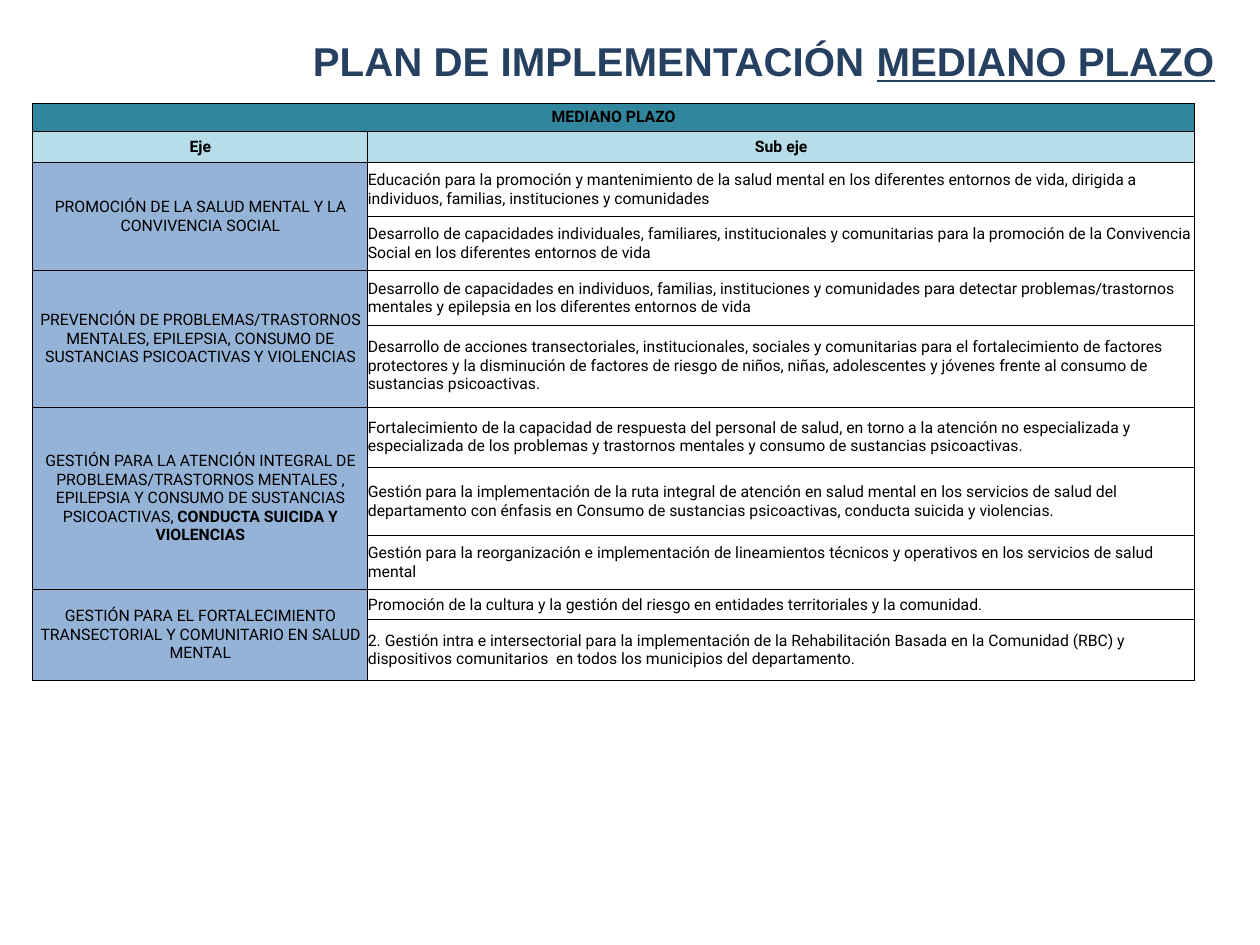
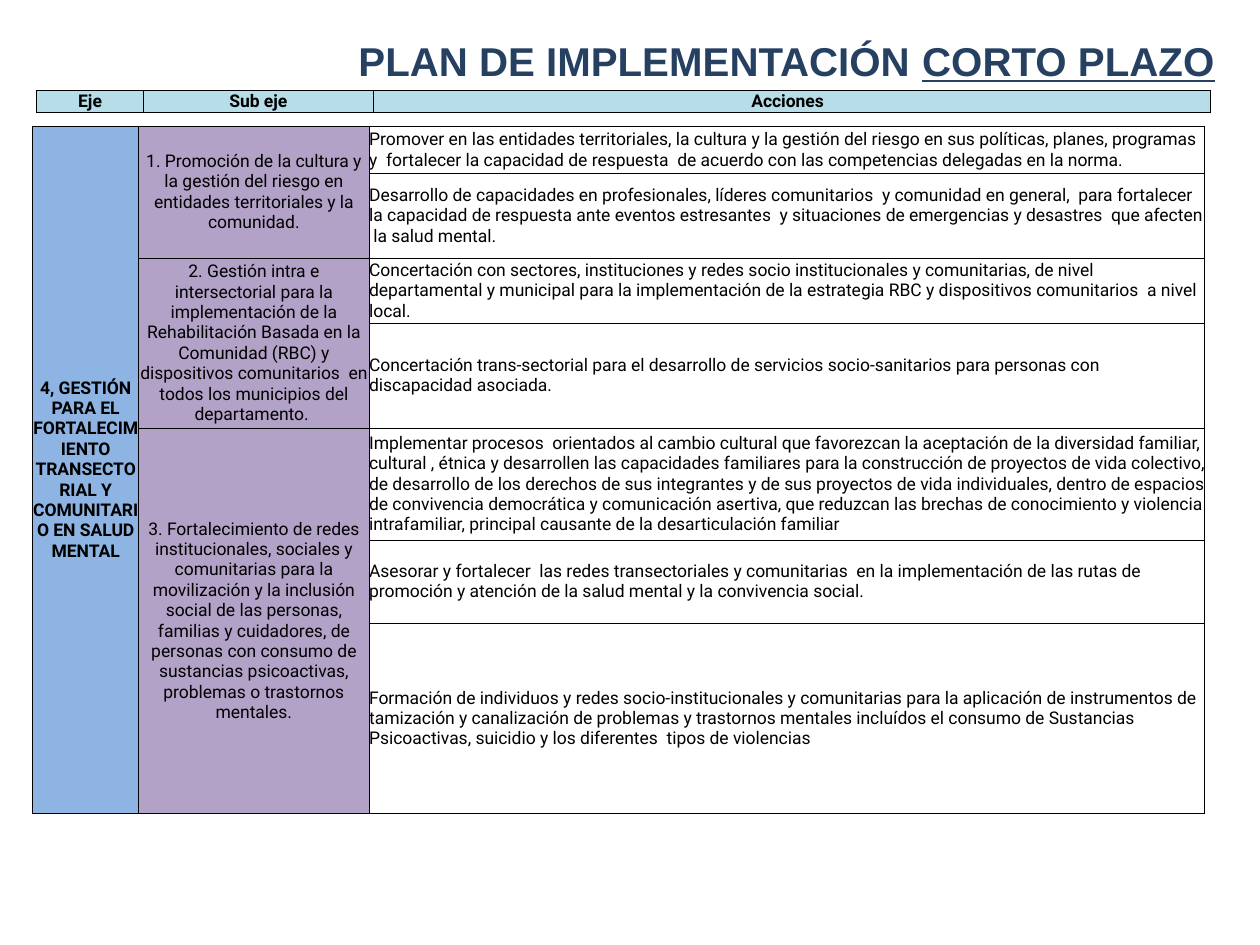
from lxml import etree
from pptx import Presentation
from pptx.dml.color import RGBColor
from pptx.enum import text as t
from pptx.oxml import ns
from pptx.util import Inches, Pt

COLORS = {
    "title": "254061",
    "ink": "000000",
    "term": "31859C",
    "heading": "B7DEE8",
    "medium_axis": "95B3D7",
    "short_axis": "8EB4E3",
    "sub_axis": "B3A2C7",
}
LEFT, CENTER, RIGHT = t.PP_ALIGN.LEFT, t.PP_ALIGN.CENTER, t.PP_ALIGN.RIGHT

MEDIUM_ROWS = [0.22, 0.25, 0.43, 0.43, 0.43, 0.65, 0.48, 0.54, 0.43, 0.24, 0.48]
MEDIUM_PLAN = [
    (["PROMOCIÓN DE LA SALUD MENTAL Y LA CONVIVENCIA SOCIAL"], [
        "Educación para la promoción y mantenimiento de la salud mental en los diferentes "
        "entornos de vida, dirigida a individuos, familias, instituciones y comunidades",
        "Desarrollo de capacidades individuales, familiares, institucionales y comunitarias "
        "para la promoción de la Convivencia Social en los diferentes entornos de vida",
    ]),
    (["PREVENCIÓN DE PROBLEMAS/TRASTORNOS MENTALES, EPILEPSIA, CONSUMO DE SUSTANCIAS "
      "PSICOACTIVAS Y VIOLENCIAS"], [
        "Desarrollo de capacidades en individuos, familias, instituciones y comunidades para "
        "detectar problemas/trastornos mentales y epilepsia en los diferentes entornos de vida",
        "Desarrollo de acciones transectoriales, institucionales, sociales y comunitarias para "
        "el fortalecimiento de factores protectores y la disminución de factores de riesgo de "
        "niños, niñas, adolescentes y jóvenes frente al consumo de sustancias psicoactivas.",
    ]),
    (["GESTIÓN PARA LA ATENCIÓN INTEGRAL DE PROBLEMAS/TRASTORNOS MENTALES , EPILEPSIA Y "
      "CONSUMO DE SUSTANCIAS PSICOACTIVAS, ", ("CONDUCTA SUICIDA Y VIOLENCIAS", {"bold": True})], [
        "Fortalecimiento de la capacidad de respuesta del personal de salud, en torno a la "
        "atención no especializada y especializada de los problemas y trastornos mentales y "
        "consumo de sustancias psicoactivas.",
        "Gestión para la implementación de la ruta integral de atención en salud mental en los "
        "servicios de salud del departamento con énfasis en Consumo de sustancias psicoactivas, "
        "conducta suicida y violencias.",
        "Gestión para la reorganización e implementación de lineamientos técnicos y operativos "
        "en los servicios de salud mental",
    ]),
    (["GESTIÓN PARA EL FORTALECIMIENTO TRANSECTORIAL Y COMUNITARIO EN SALUD MENTAL"], [
        "Promoción de la cultura y la gestión del riesgo en entidades territoriales y la comunidad.",
        "2. Gestión intra e intersectorial para la implementación de la Rehabilitación Basada en "
        "la Comunidad (RBC) y dispositivos comunitarios  en todos los municipios del departamento.",
    ]),
]

SHORT_ROWS = [0.38, 0.66, 0.52, 0.83, 0.89, 0.66, 1.51]
SHORT_AXIS = "4, GESTIÓN PARA EL FORTALECIMIENTO TRANSECTORIAL Y COMUNITARIO EN SALUD MENTAL"
SHORT_PLAN = [
    (["1. Promoción de la cultura y la gestión del riesgo en entidades territoriales y la "
      "comunidad."], [
        "Promover en las entidades territoriales, la cultura y la gestión del riesgo en sus "
        "políticas, planes, programas  y  fortalecer la capacidad de respuesta  de acuerdo con "
        "las competencias delegadas en la norma.",
        "Desarrollo de capacidades en profesionales, líderes comunitarios  y comunidad en "
        "general,  para fortalecer la capacidad de respuesta ante eventos estresantes  y "
        "situaciones de emergencias y desastres  que afecten  la salud mental.",
    ]),
    (["2. Gestión intra e intersectorial para la implementación de la Rehabilitación Basada en "
      "la Comunidad (RBC) y dispositivos comunitarios  en todos los municipios del "
      "departamento. "], [
        "Concertación con sectores, instituciones y redes socio institucionales y comunitarias, "
        "de nivel departamental y municipal para la implementación de la estrategia RBC y "
        "dispositivos comunitarios  a nivel local.",
        "Concertación trans-sectorial para el desarrollo de servicios socio-sanitarios para "
        "personas con discapacidad asociada.",
    ]),
    (["3. Fortalecimiento de redes institucionales, sociales y comunitarias para la movilización "
      "y la inclusión social de las personas, familias y cuidadores, de personas con consumo de "
      "sustancias psicoactivas, problemas o trastornos mentales."], [
        "Implementar procesos  orientados al cambio cultural que favorezcan la aceptación de la "
        "diversidad familiar, cultural , étnica y desarrollen las capacidades familiares para la "
        "construcción de proyectos de vida colectivo, de desarrollo de los derechos de sus "
        "integrantes y de sus proyectos de vida individuales, dentro de espacios de convivencia "
        "democrática y comunicación asertiva, que reduzcan las brechas de conocimiento y "
        "violencia intrafamiliar, principal causante de la desarticulación familiar",
        "Asesorar y fortalecer  las redes transectoriales y comunitarias  en la implementación "
        "de las rutas de promoción y atención de la salud mental y la convivencia social.",
        "Formación de individuos y redes socio-institucionales y comunitarias para la aplicación "
        "de instrumentos de tamización y canalización de problemas y trastornos mentales "
        "incluídos el consumo de Sustancias Psicoactivas, suicidio y los diferentes  tipos de "
        "violencias",
    ]),
]


def write(frame, pieces, size=9, font="Roboto", color="ink", bold=False, align=LEFT):
    frame.word_wrap = True
    paragraph = frame.paragraphs[0]
    paragraph.alignment = align
    for piece in pieces:
        words, changes = (piece, {}) if isinstance(piece, str) else piece
        run = paragraph.add_run()
        run.text = words
        run.font.size = Pt(size)
        run.font.name = font
        run.font.color.rgb = RGBColor.from_string(COLORS[color])
        run.font.bold = changes.get("bold", bold)
        run.font.underline = changes.get("underline")


def add_title(slide, term):
    title = slide.shapes.add_textbox(Inches(1.96), Inches(0.24), Inches(7.78), Inches(0.49))
    write(title.text_frame, ["PLAN DE IMPLEMENTACIÓN ", (term, {"underline": True})],
          size=23, font="Arial", color="title", bold=True, align=RIGHT)
    title.text_frame.auto_size = t.MSO_AUTO_SIZE.SHAPE_TO_FIT_TEXT


def add_borders(cell):
    properties = cell._tc.get_or_add_tcPr()
    for side in ("lnL", "lnR", "lnT", "lnB"):
        line = etree.SubElement(properties, ns.qn(f"a:{side}"), w=str(Pt(0.5)))
        solid = etree.SubElement(line, ns.qn("a:solidFill"))
        etree.SubElement(solid, ns.qn("a:srgbClr"), val=COLORS["ink"])


def add_grid(slide, left, top, widths, heights):
    grid = slide.shapes.add_table(len(heights), len(widths), Inches(left), Inches(top),
                                  Inches(sum(widths)), Inches(sum(heights))).table
    grid.first_row = grid.horz_banding = False
    for column, width in zip(grid.columns, widths):
        column.width = Inches(width)
    for row, height in zip(grid.rows, heights):
        row.height = Inches(height)
    for cell in grid.iter_cells():
        cell.margin_left = cell.margin_right = cell.margin_top = cell.margin_bottom = 0
        cell.vertical_anchor = t.MSO_ANCHOR.MIDDLE
        add_borders(cell)
        cell.fill.background()
    return grid


def fill_cell(grid, row, column, pieces, fill=None, rows=1, columns=1, **style):
    cell = grid.cell(row, column)
    if rows * columns > 1:
        cell.merge(grid.cell(row + rows - 1, column + columns - 1))
    if fill:
        cell.fill.solid()
        cell.fill.fore_color.rgb = RGBColor.from_string(COLORS[fill])
    write(cell.text_frame, pieces, **style)


def fill_headings(grid, row, headings, size):
    for column, heading in enumerate(headings):
        fill_cell(grid, row, column, [heading], "heading", size=size, bold=True, align=CENTER)


def fill_plan(grid, row, column, plan, fill, size):
    for group, entries in plan:
        fill_cell(grid, row, column, group, fill, rows=len(entries), size=size, align=CENTER)
        for entry in entries:
            fill_cell(grid, row, column + 1, [entry], size=size)
            row += 1


def add_medium_term(slide):
    add_title(slide, "MEDIANO PLAZO")
    grid = add_grid(slide, 0.26, 0.82, [2.66, 6.56], MEDIUM_ROWS)
    fill_cell(grid, 0, 0, ["MEDIANO PLAZO"], "term", columns=2, bold=True, align=CENTER)
    fill_headings(grid, 1, ["Eje", "Sub eje"], size=9)
    fill_plan(grid, 2, 0, MEDIUM_PLAN, "medium_axis", size=9)


def add_short_term(slide):
    add_title(slide, "CORTO PLAZO")
    headings = add_grid(slide, 0.29, 0.72, [0.85, 1.82, 6.65], [0.17])
    fill_headings(headings, 0, ["Eje", "Sub eje", "Acciones  "], size=10)
    grid = add_grid(slide, 0.26, 1, [0.84, 1.83, 6.63], SHORT_ROWS)
    fill_cell(grid, 0, 0, [SHORT_AXIS], "short_axis", rows=len(SHORT_ROWS),
              size=10, bold=True, align=CENTER)
    fill_plan(grid, 0, 1, SHORT_PLAN, "sub_axis", size=10)


def main():
    deck = Presentation()
    deck.slide_width, deck.slide_height = Inches(10), Inches(7.5)
    for build in (add_medium_term, add_short_term):
        build(deck.slides.add_slide(deck.slide_layouts[6]))
    deck.save("out.pptx")


if __name__ == "__main__":
    main()
